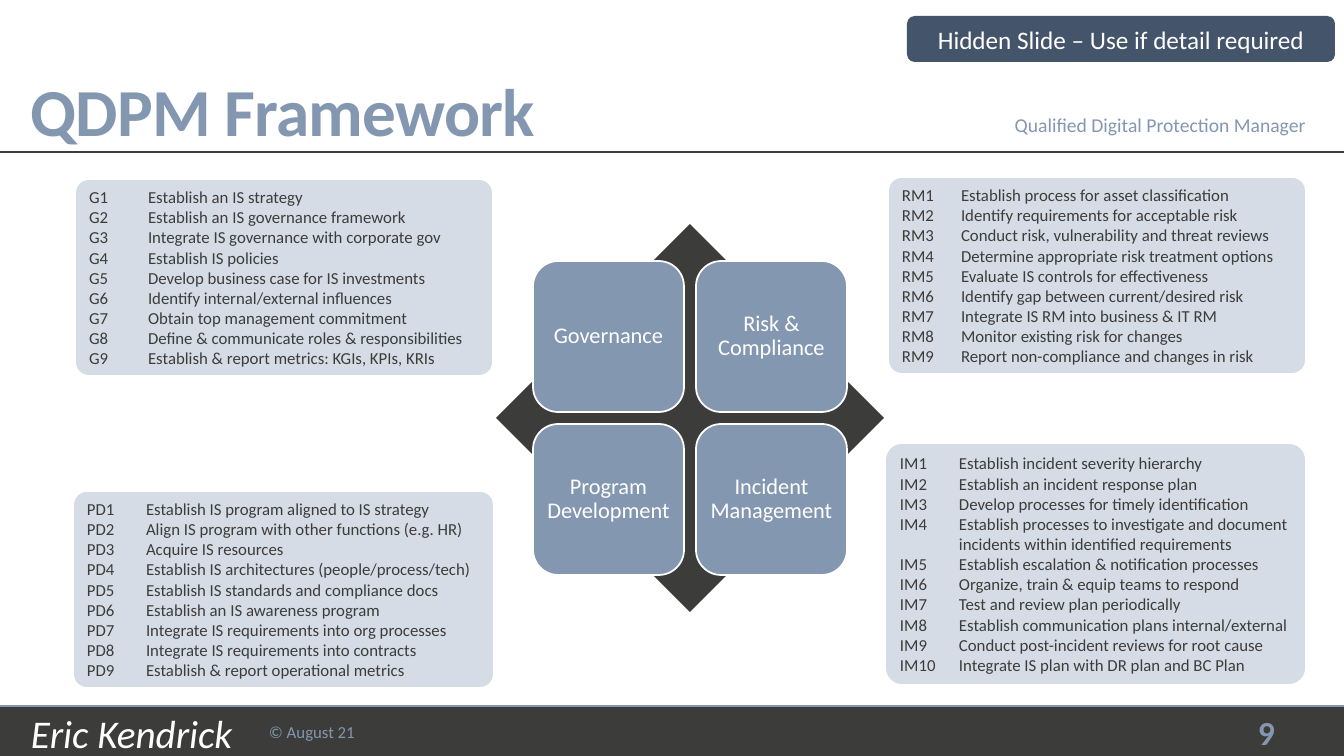
from lxml.etree import SubElement
from pptx import Presentation
from pptx.dml.color import RGBColor
from pptx.enum.shapes import MSO_CONNECTOR, MSO_SHAPE
from pptx.enum.text import MSO_ANCHOR, MSO_AUTO_SIZE, PP_ALIGN
from pptx.oxml.ns import qn
from pptx.util import Pt

WIDTH, HEIGHT = 1344, 756
EMU_PER_PX = 12192000 / WIDTH
FONT = "Calibri"
COLORS = {
    "dark": "3C3C3B",
    "blue": "8497B0",
    "pale": "D6DCE5",
    "navy": "44546A",
    "white": "FFFFFF",
}

GOVERNANCE = """G1\tEstablish an IS strategy
G2\tEstablish an IS governance framework
G3\tIntegrate IS governance with corporate gov
G4\tEstablish IS policies
G5\tDevelop business case for IS investments
G6\tIdentify internal/external influences
G7\tObtain top management commitment
G8\tDefine & communicate roles & responsibilities
G9\tEstablish & report metrics: KGIs, KPIs, KRIs"""

PROGRAM = """PD1\tEstablish IS program aligned to IS strategy
PD2\tAlign IS program with other functions (e.g. HR)
PD3\tAcquire IS resources
PD4\tEstablish IS architectures (people/process/tech)
PD5\tEstablish IS standards and compliance docs
PD6\tEstablish an IS awareness program
PD7\tIntegrate IS requirements into org processes
PD8\tIntegrate IS requirements into contracts
PD9\tEstablish & report operational metrics"""

RISK = """RM1\tEstablish process for asset classification
RM2\tIdentify requirements for acceptable risk
RM3\tConduct risk, vulnerability and threat reviews
RM4\tDetermine appropriate risk treatment options
RM5\tEvaluate IS controls for effectiveness
RM6\tIdentify gap between current/desired risk
RM7\tIntegrate IS RM into business & IT RM
RM8\tMonitor existing risk for changes
RM9\tReport non-compliance and changes in risk"""

INCIDENT = """IM1\tEstablish incident severity hierarchy
IM2\tEstablish an incident response plan
IM3\tDevelop processes for timely identification
IM4\tEstablish processes to investigate and document
\tincidents within identified requirements
IM5\tEstablish escalation & notification processes
IM6\tOrganize, train & equip teams to respond
IM7\tTest and review plan periodically
IM8\tEstablish communication plans internal/external
IM9\tConduct post-incident reviews for root cause
IM10\tIntegrate IS plan with DR plan and BC Plan"""


def px(length):
    return round(length * EMU_PER_PX)


def rgb(name):
    return RGBColor.from_string(COLORS[name])


def write(shape, text, size, color, align=PP_ALIGN.LEFT, anchor=MSO_ANCHOR.MIDDLE,
          insets=(10, 5, 10, 5), bold=False, italic=False, spacing=None):
    frame = shape.text_frame
    frame.text = text
    frame.word_wrap = True
    frame.auto_size = MSO_AUTO_SIZE.NONE
    frame.vertical_anchor = anchor
    (frame.margin_left, frame.margin_top,
     frame.margin_right, frame.margin_bottom) = map(px, insets)
    for paragraph in frame.paragraphs:
        paragraph.alignment = align
        if spacing:
            paragraph.line_spacing = spacing
        for run in paragraph.runs:
            font = run.font
            font.name, font.size = FONT, Pt(size)
            font.bold, font.italic = bold, italic
            font.color.rgb = rgb(color)


def add_label(slide, box, text, size, color, **style):
    label = slide.shapes.add_textbox(*map(px, box))
    write(label, text, size, color, **style)


def add_block(slide, kind, box, fill, outline=None):
    block = slide.shapes.add_shape(kind, *map(px, box))
    block.shadow.inherit = False
    block.fill.solid()
    block.fill.fore_color.rgb = rgb(fill)
    if outline:
        block.line.color.rgb = rgb(outline)
        block.line.width = Pt(1.25)
    else:
        block.line.fill.background()
    return block


def add_rule(slide, y, color):
    rule = slide.shapes.add_connector(MSO_CONNECTOR.STRAIGHT, 0, px(y), px(WIDTH), px(y))
    rule.line.color.rgb = rgb(color)
    rule.line.width = Pt(2)
    SubElement(rule._element.spPr, qn("a:effectLst"))


def add_header(slide, box):
    left, top, width, height = box
    title = slide.shapes.title
    title.left, title.top, title.width, title.height = map(px, box)
    write(title, "QDPM Framework", 48, "blue", anchor=MSO_ANCHOR.BOTTOM,
          insets=(30, 5, 10, 5), bold=True, spacing=0.85)
    title.text_frame.paragraphs[0].runs[0].font._element.set("spc", "-50")
    add_rule(slide, top + height - 3, "dark")
    add_label(slide, (left + width - 378, top + 108, 350, 34),
              "Qualified Digital Protection Manager", 14, "blue", align=PP_ALIGN.RIGHT)
    notice = add_block(slide, MSO_SHAPE.ROUNDED_RECTANGLE,
                       (left + width - 437, top + 16, 428, 46), "navy")
    write(notice, "Hidden Slide – Use if detail required", 18, "white",
          align=PP_ALIGN.CENTER)


def add_footer(slide, box):
    left, top, width, height = box
    add_block(slide, MSO_SHAPE.RECTANGLE, box, "dark")
    add_rule(slide, top, "blue")
    add_label(slide, (left + 21, top + 5, 241, 44), "Eric Kendrick", 28, "white",
              insets=(10, 0, 10, 0), italic=True)
    add_label(slide, (left + 259, top + 6, 176, 40), "© August 21", 12, "blue")
    add_label(slide, (left + width - 252, top + 2, 193, 48), "9", 24, "blue",
              align=PP_ALIGN.RIGHT, insets=(10, 0, 10, 0), bold=True)


def add_matrix(slide, box):
    left, top, width, height = box
    add_block(slide, MSO_SHAPE.DIAMOND, box, "dark")
    domains = ["Governance", "Risk & Compliance",
               "Program Development", "Incident Management"]
    tile, pitch = 151, 163
    margin = (width - tile - pitch) / 2
    for index, domain in enumerate(domains):
        row, column = divmod(index, 2)
        corner = (left + margin + column * pitch, top + margin + row * pitch)
        square = add_block(slide, MSO_SHAPE.ROUNDED_RECTANGLE,
                           (*corner, tile, tile), "blue", "white")
        write(square, domain, 16, "white", align=PP_ALIGN.CENTER,
              insets=(6, 6, 6, 6), spacing=0.9)


def add_panel(slide, box, tasks):
    panel = add_block(slide, MSO_SHAPE.ROUNDED_RECTANGLE, box, "pale", "white")
    panel.adjustments[0] = 0.07
    write(panel, tasks, 12, "dark")
    # Tab stop between task code and description
    for paragraph in panel.text_frame.paragraphs:
        stops = SubElement(paragraph._p.get_or_add_pPr(), qn("a:tabLst"))
        SubElement(stops, qn("a:tab"), pos=str(px(59)), algn="l")


def main():
    deck = Presentation()
    deck.slide_width, deck.slide_height = px(WIDTH), px(HEIGHT)
    slide = deck.slides.add_slide(deck.slide_layouts[5])

    # Footer band and header
    add_footer(slide, (0, 706, WIDTH, 50))
    add_header(slide, (0, 0, WIDTH, 155))

    # Four domains in the centre
    add_matrix(slide, (496, 224, 388, 388))

    # Task lists around the domains
    add_panel(slide, (75, 179, 418, 197), GOVERNANCE)
    add_panel(slide, (73, 491, 421, 197), PROGRAM)
    add_panel(slide, (888, 177, 418, 197), RISK)
    add_panel(slide, (885, 443, 421, 242), INCIDENT)

    deck.save("out.pptx")


if __name__ == "__main__":
    main()
